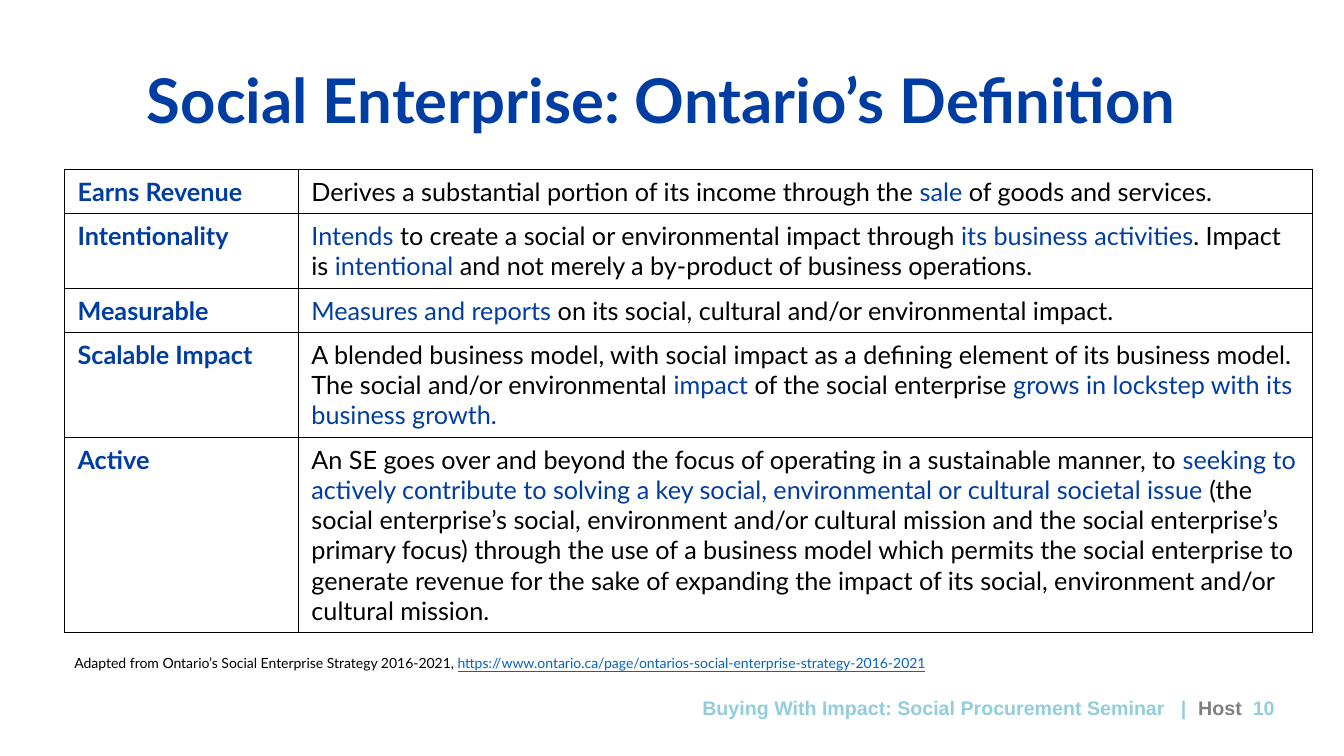
from dataclasses import dataclass

import lxml.etree
import pptx
import pptx.dml.color
import pptx.enum.text
import pptx.oxml.ns
import pptx.util

RGBColor = pptx.dml.color.RGBColor
BLUE = RGBColor(0x00, 0x3D, 0xA3)
BLACK = RGBColor(0x00, 0x00, 0x00)
LINK = RGBColor(0x05, 0x63, 0xC1)
AQUA = RGBColor(0x92, 0xCD, 0xDC)
GRAY = RGBColor(0x7F, 0x7F, 0x7F)

SLIDE_W = pptx.util.Inches(13.33)
SLIDE_H = pptx.util.Inches(7.5)


@dataclass(frozen=True)
class Span:
    text: str
    color: RGBColor = BLACK
    bold: bool = False
    underline: bool = False


@dataclass(frozen=True)
class Box:
    """Left, top, width and height as percentages of the slide."""
    left: float
    top: float
    width: float
    height: float

    def emu(self) -> tuple[int, int, int, int]:
        return across(self.left), down(self.top), across(self.width), down(self.height)


@dataclass(frozen=True)
class Criterion:
    name: str
    height: float  # percentage of the slide height
    spans: tuple[Span, ...]


def across(percent: float) -> int:
    return round(SLIDE_W * percent / 100)


def down(percent: float) -> int:
    return round(SLIDE_H * percent / 100)


CRITERIA = (
    Criterion("Earns Revenue", 5.33, (
        Span("Derives a substantial portion of its income through the "),
        Span("sale ", BLUE),
        Span("of goods and services."),
    )),
    Criterion("Intentionality", 8.8, (
        Span("Intends ", BLUE),
        Span("to create a social or environmental impact through "),
        Span("its business activities", BLUE),
        Span(". Impact is "),
        Span("intentional ", BLUE),
        Span("and not merely a by-product of business operations."),
    )),
    Criterion("Measurable", 5.2, (
        Span("Measures and reports ", BLUE),
        Span("on its social, cultural and/or environmental impact."),
    )),
    Criterion("Scalable Impact", 12.4, (
        Span("A blended business model, with social impact as a defining element of "
             "its business model. The social and/or environmental "),
        Span("impact ", BLUE),
        Span("of the social enterprise "),
        Span("grows in lockstep with its business growth.", BLUE),
    )),
    Criterion("Active", 24.93, (
        Span("An SE goes over and beyond the focus of operating in a sustainable manner, to "),
        Span("seeking to actively contribute to solving a key social, environmental or "
             "cultural societal issue ", BLUE),
        Span("(the social enterprise’s social, environment and/or cultural mission and the "
             "social enterprise’s primary focus) through the use of a business model which "
             "permits the social enterprise to generate revenue for the sake of expanding "
             "the impact of its social, environment and/or cultural mission."),
    )),
)
COLUMNS = (17.4, 75.47)


def write(p, spans: tuple[Span, ...], size: float, font: str = "Lato") -> None:
    for span in spans:
        r = p.add_run()
        r.text = span.text
        r.font.name = font
        r.font.size = pptx.util.Pt(size)
        r.font.bold = span.bold
        r.font.underline = span.underline
        r.font.color.rgb = span.color


def add_text(s, box: Box, spans: tuple[Span, ...], size: float, font: str = "Lato",
             align=pptx.enum.text.PP_ALIGN.LEFT) -> None:
    tf = s.shapes.add_textbox(*box.emu()).text_frame
    tf.word_wrap = True
    p = tf.paragraphs[0]
    p.alignment = align
    write(p, spans, size, font)


def add_borders(cell) -> None:
    tc_pr = cell._tc.get_or_add_tcPr()
    for i, side in enumerate(("a:lnL", "a:lnR", "a:lnT", "a:lnB")):
        ln = lxml.etree.Element(pptx.oxml.ns.qn(side), w=str(pptx.util.Pt(1)))
        fill = lxml.etree.SubElement(ln, pptx.oxml.ns.qn("a:solidFill"))
        lxml.etree.SubElement(fill, pptx.oxml.ns.qn("a:srgbClr"), val=str(BLACK))
        tc_pr.insert(i, ln)


def fill_cell(cell, spans: tuple[Span, ...]) -> None:
    cell.margin_left = cell.margin_right = pptx.util.Inches(0.13)
    cell.margin_top = cell.margin_bottom = pptx.util.Inches(0.07)
    cell.fill.background()
    add_borders(cell)
    write(cell.text_frame.paragraphs[0], spans, 18)


def add_criteria(s, left: float, top: float) -> None:
    box = Box(left, top, sum(COLUMNS), sum(c.height for c in CRITERIA))
    table = s.shapes.add_table(len(CRITERIA), len(COLUMNS), *box.emu()).table
    table.first_row = table.horz_banding = False
    for column, width in zip(table.columns, COLUMNS):
        column.width = across(width)
    for i, criterion in enumerate(CRITERIA):
        table.rows[i].height = down(criterion.height)
        fill_cell(table.cell(i, 0), (Span(criterion.name, BLUE, bold=True),))
        fill_cell(table.cell(i, 1), criterion.spans)


def add_title(s, box: Box, text: str) -> None:
    sp = s.shapes.title
    sp.left, sp.top, sp.width, sp.height = box.emu()
    tf = sp.text_frame
    tf.word_wrap = True
    tf.auto_size = pptx.enum.text.MSO_AUTO_SIZE.NONE
    tf.vertical_anchor = pptx.enum.text.MSO_ANCHOR.MIDDLE
    p = tf.paragraphs[0]
    p.alignment = pptx.enum.text.PP_ALIGN.CENTER
    p.line_spacing = 0.9
    write(p, (Span(text, BLUE, bold=True),), 44)


def main() -> None:
    prs = pptx.Presentation()
    prs.slide_width, prs.slide_height = SLIDE_W, SLIDE_H
    s = prs.slides.add_slide(prs.slide_layouts[5])

    # Footer
    add_text(s, Box(50.64, 91.33, 44.94, 3.47), (
        Span("Buying With Impact: Social Procurement Seminar   |  ", AQUA, bold=True),
        Span("Host  ", GRAY, bold=True),
        Span("10", AQUA, bold=True),
    ), 14, "Arial", pptx.enum.text.PP_ALIGN.RIGHT)

    # Definition table and title
    add_criteria(s, 4.8, 22.4)
    add_title(s, Box(1.95, 2.4, 95.72, 22.53), "Social Enterprise: Ontario’s Definition ")

    # Source line
    add_text(s, Box(4.8, 85.87, 73.37, 3.6), (
        Span("Adapted from Ontario’s Social Enterprise Strategy 2016-2021, "),
        Span("https://www.ontario.ca/page/ontarios-social-enterprise-strategy-2016-2021",
             LINK, underline=True),
    ), 10)

    prs.save("out.pptx")


if __name__ == "__main__":
    main()
